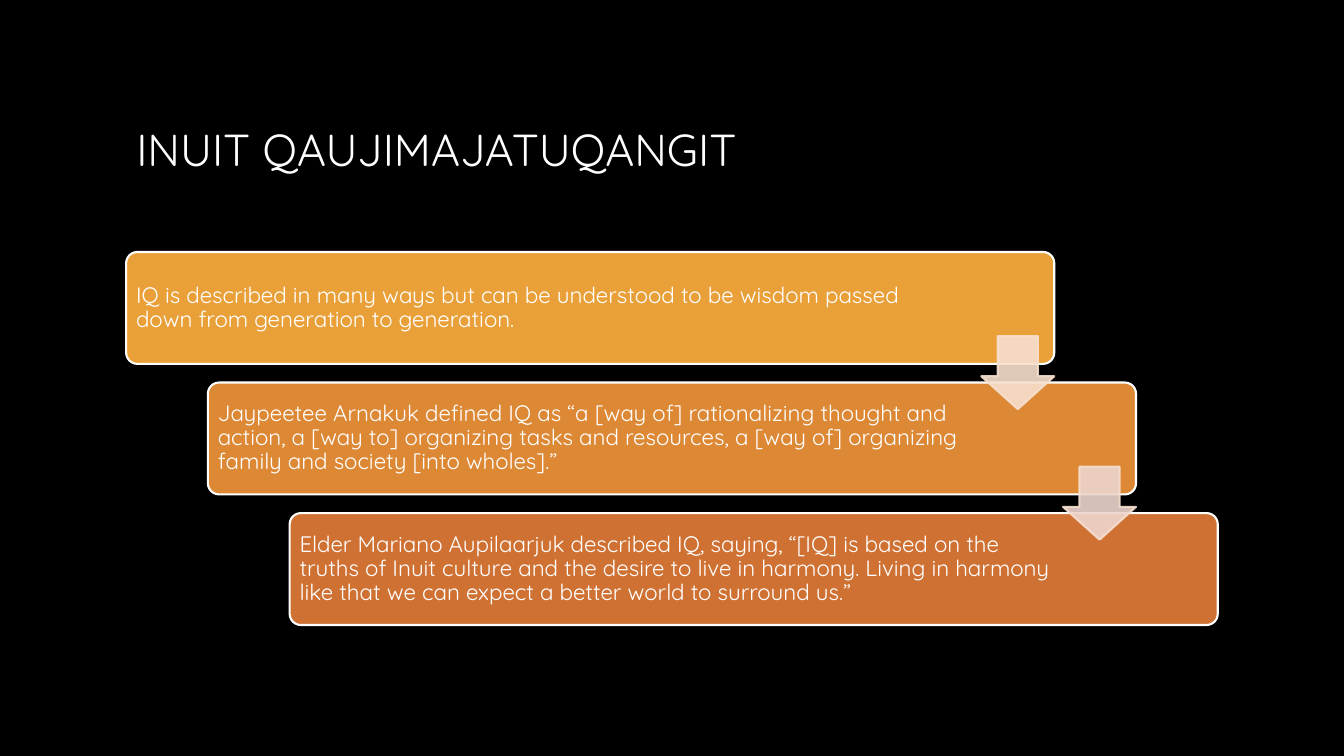
"""Builds a staircase slide on the meaning of Inuit Qaujimajatuqangit."""
from dataclasses import dataclass

from lxml import etree
from pptx import Presentation
from pptx.dml.color import RGBColor
from pptx.enum.shapes import MSO_SHAPE
from pptx.enum.text import MSO_ANCHOR, MSO_AUTO_SIZE, PP_ALIGN
from pptx.oxml.ns import qn
from pptx.util import Cm, Pt

ROUNDED = MSO_SHAPE.ROUNDED_RECTANGLE
DOWN_ARROW = MSO_SHAPE.DOWN_ARROW
MIDDLE = MSO_ANCHOR.MIDDLE
LEFT = PP_ALIGN.LEFT
NO_FIT = MSO_AUTO_SIZE.NONE
TITLE_ONLY = 5


@dataclass(frozen=True)
class Theme:
    font: str = "Quicksand"
    background: str = "000000"
    text: str = "FFFFFF"
    arrow_line: str = "F7DFCE"
    cards: tuple = ("E9A039", "DD8835", "CF7133")
    arrows: tuple = ("F7DFCE", "EDD5CE")
    arrow_opacity: int = 90
    title_size: int = 32
    body_size: int = 16
    line_width: float = 1.5


class StaircaseSlide:
    def __init__(self, presentation, theme):
        self.theme = theme
        self.slide = presentation.slides.add_slide(presentation.slide_layouts[TITLE_ONLY])
        fill = self.slide.background.fill
        fill.solid()
        fill.fore_color.rgb = RGBColor.from_string(theme.background)

    def set_text(self, text_frame, text, size, line_spacing):
        text_frame.text = text
        text_frame.word_wrap = True
        text_frame.auto_size = NO_FIT
        text_frame.vertical_anchor = MIDDLE
        paragraph = text_frame.paragraphs[0]
        paragraph.alignment = LEFT
        paragraph.line_spacing = line_spacing
        font = paragraph.runs[0].font
        font.name = self.theme.font
        font.size = Pt(size)
        font.color.rgb = RGBColor.from_string(self.theme.text)

    def title(self, text, left, top, width, height):
        shape = self.slide.shapes.title
        shape.left, shape.top, shape.width, shape.height = map(Cm, (left, top, width, height))
        self.set_text(shape.text_frame, text, self.theme.title_size, 1.0)

    def shape(self, kind, box, adjustments, fill, line):
        shape = self.slide.shapes.add_shape(kind, *map(Cm, box))
        shape.shadow.inherit = False
        for index, value in enumerate(adjustments):
            shape.adjustments[index] = value
        shape.fill.solid()
        shape.fill.fore_color.rgb = RGBColor.from_string(fill)
        shape.line.color.rgb = RGBColor.from_string(line)
        shape.line.width = Pt(self.theme.line_width)
        return shape

    def card(self, box, fill):
        self.shape(ROUNDED, box, (0.1,), fill, self.theme.text)

    def card_text(self, text, box):
        text_frame = self.slide.shapes.add_textbox(*map(Cm, box)).text_frame
        text_frame.margin_left = text_frame.margin_right = Cm(0.17)
        text_frame.margin_top = text_frame.margin_bottom = Cm(0.17)
        self.set_text(text_frame, text, self.theme.body_size, 0.9)

    def arrow(self, box, fill):
        shape = self.shape(DOWN_ARROW, box, (0.55, 0.45), fill, self.theme.arrow_line)
        for color in shape.element.spPr.iter(qn("a:srgbClr")):
            alpha = etree.SubElement(color, qn("a:alpha"))
            alpha.set("val", str(self.theme.arrow_opacity * 1000))


def main():
    presentation = Presentation()
    presentation.slide_width = Cm(33.87)
    presentation.slide_height = Cm(19.05)
    theme = Theme()
    staircase = StaircaseSlide(presentation, theme)
    staircase.title("INUIT QAUJIMAJATUQANGIT", 3.18, 1.7, 27.5, 4.1)

    card_width, card_height = 23.39, 2.82
    arrow_size, arrow_drop, inset = 1.84, 2.12, 0.08
    statements = (
        ("IQ is described in many ways but can be understood to be wisdom passed "
         "down from generation to generation.", 20.35),
        ("Jaypeetee Arnakuk defined IQ as “a [way of] rationalizing thought and "
         "action, a [way to] organizing tasks and resources, a [way of] organizing "
         "family and society [into wholes].”", 19.33),
        ("Elder Mariano Aupilaarjuk described IQ, saying, “[IQ] is based on the "
         "truths of Inuit culture and the desire to live in harmony. Living in harmony "
         "like that we can expect a better world to surround us.”", 19.33),
    )
    corners = [(3.18 + 2.06 * step, 6.35 + 3.29 * step) for step in range(len(statements))]

    for (left, top), (text, text_width), fill in zip(corners, statements, theme.cards):
        staircase.card((left, top, card_width, card_height), fill)
        staircase.card_text(
            text, (left + inset, top + inset, text_width, card_height - 2 * inset))
    for (left, top), fill in zip(corners, theme.arrows):
        staircase.arrow(
            (left + card_width - arrow_size, top + arrow_drop, arrow_size, arrow_size), fill)

    presentation.save("out.pptx")


if __name__ == "__main__":
    main()
